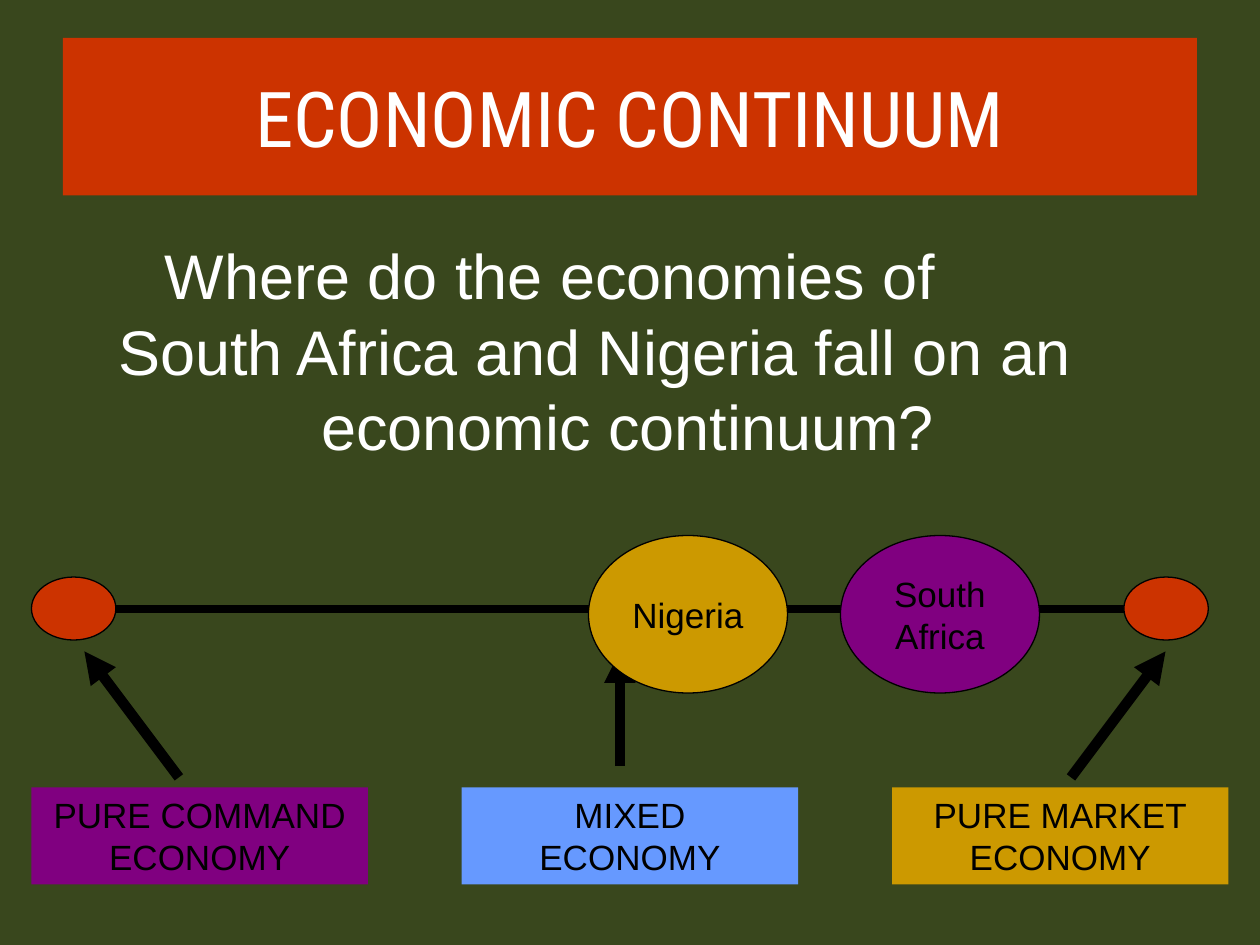
from lxml import etree
from pptx import Presentation
from pptx.dml.color import RGBColor
from pptx.enum.shapes import MSO_CONNECTOR, MSO_SHAPE
from pptx.enum.text import MSO_ANCHOR, PP_ALIGN
from pptx.oxml.ns import qn
from pptx.util import Inches, Pt

RECT, OVAL = MSO_SHAPE.RECTANGLE, MSO_SHAPE.OVAL
LINE = MSO_CONNECTOR.STRAIGHT
TOP, MIDDLE = MSO_ANCHOR.TOP, MSO_ANCHOR.MIDDLE
LEFT, CENTER = PP_ALIGN.LEFT, PP_ALIGN.CENTER

GREEN = RGBColor(0x39, 0x47, 0x1D)
RED = RGBColor(0xCC, 0x33, 0x00)
PURPLE = RGBColor(0x80, 0x00, 0x80)
BLUE = RGBColor(0x66, 0x99, 0xFF)
GOLD = RGBColor(0xCC, 0x99, 0x00)
BLACK = RGBColor(0x00, 0x00, 0x00)
WHITE = RGBColor(0xFF, 0xFF, 0xFF)

prs = Presentation()
prs.slide_width, prs.slide_height = Inches(10), Inches(7.5)
slide = prs.slides.add_slide(prs.slide_layouts[6])
slide.background.fill.solid()
slide.background.fill.fore_color.rgb = GREEN


def put(text, x, y, w, h, kind=None, fill=None, edge=False, size=20,
        font="Arial", color=BLACK, anchor=TOP, align=CENTER, wrap=True,
        indents=()):
    """Add a shape, or a text box if no kind is given, with its text."""
    box = [Inches(n) for n in (x, y, w, h)]
    if kind is None:
        shape = slide.shapes.add_textbox(*box)
    else:
        shape = slide.shapes.add_shape(kind, *box)
        shape.shadow.inherit = False
        shape.fill.solid()
        shape.fill.fore_color.rgb = fill
        if edge:
            shape.line.color.rgb = BLACK
            shape.line.width = Pt(0.75)
        else:
            shape.line.fill.background()
    frame = shape.text_frame
    frame.word_wrap = wrap
    frame.vertical_anchor = anchor
    frame.text = text
    for para in frame.paragraphs:
        para.alignment = align
        for run in para.runs:
            run.font.name = font
            run.font.size = Pt(size)
            run.font.color.rgb = color
    for para, dent in zip(frame.paragraphs, indents):
        para._p.get_or_add_pPr().set("marL", str(Inches(dent)))


def link(x1, y1, x2, y2, width, **ends):
    """Add a black line with the given headEnd and tailEnd types."""
    line = slide.shapes.add_connector(
        LINE, Inches(x1), Inches(y1), Inches(x2), Inches(y2))
    line.line.color.rgb = BLACK
    line.line.width = Pt(width)
    for tag, kind in ends.items():
        etree.SubElement(line.line._get_or_add_ln(), qn("a:" + tag), type=kind)
    etree.SubElement(line._element.spPr, qn("a:effectLst"))


# Title
put("ECONOMIC CONTINUUM", 0.5, 0.3, 9, 1.25, RECT, RED, size=44,
    font="Roboto Condensed", color=WHITE, anchor=MIDDLE)

# Continuum with its two ends
link(0.67, 4.83, 9.17, 4.83, 4.5, headEnd="oval", tailEnd="oval")
for x in (0.25, 8.92):
    put("", x, 4.58, 0.67, 0.5, OVAL, RED, edge=True)

# Arrows from the labels up to the continuum
for x1, y1, x2 in ((1.42, 6.17, 0.67), (8.5, 6.17, 9.25), (4.92, 6.08, 4.92)):
    link(x1, y1, x2, 5.17, 6, tailEnd="triangle")

# Labels of the economy types
labels = (("PURE COMMAND\vECONOMY", PURPLE), ("MIXED\vECONOMY", BLUE),
          ("PURE MARKET\vECONOMY", GOLD))
for i, (text, fill) in enumerate(labels):
    put(text, 0.25 + i * 3.415, 6.25, 2.67, 0.77, RECT, fill)

# Question, with stepped lines
put("Where do the economies of\nSouth Africa and Nigeria fall on an\n"
    "economic continuum?", 0.5, 1.83, 9, 2.8, size=36, color=WHITE,
    align=LEFT, indents=(0.71, 0.34, 1.95))

# Countries on the continuum
for text, x, fill in (("South\nAfrica", 6.67, PURPLE), ("Nigeria", 4.67, GOLD)):
    put(text, x, 4.25, 1.58, 1.25, OVAL, fill, edge=True, anchor=MIDDLE,
        wrap=False)

prs.save("out.pptx")
